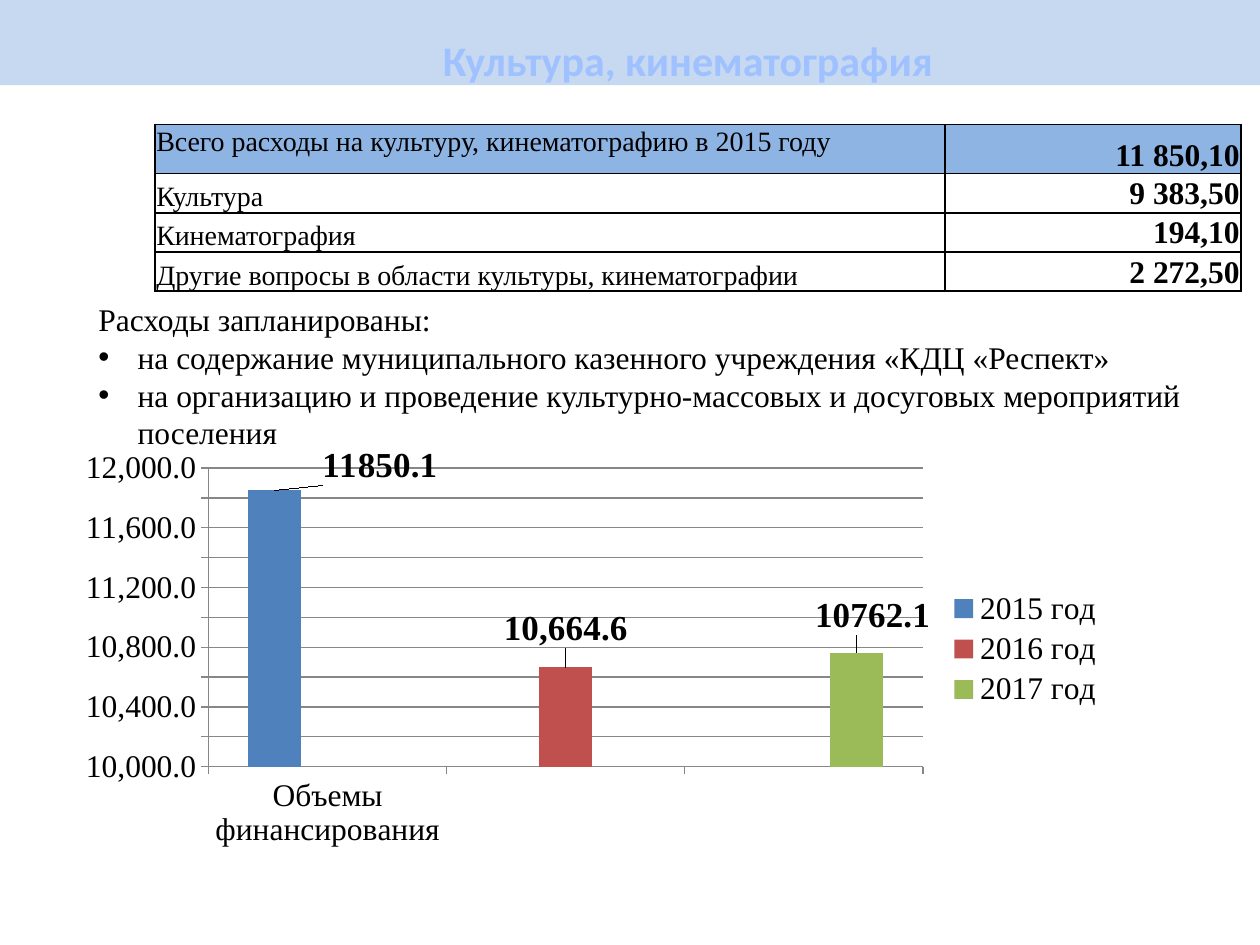
from lxml import etree
from pptx import Presentation
from pptx import util as u
from pptx.chart import data as cd
from pptx.dml.color import RGBColor
from pptx.enum import chart as ce, shapes, text
from pptx.oxml.ns import qn

BAND = RGBColor(0xC6, 0xD9, 0xF1)
HEAD = RGBColor(0x8E, 0xB4, 0xE3)
SKY = RGBColor(0xA0, 0xC1, 0xFF)
BLACK = RGBColor(0, 0, 0)
GRAY = RGBColor(0x87, 0x87, 0x87)
BLUE = RGBColor(0x4F, 0x81, 0xBD)
RED = RGBColor(0xC0, 0x50, 0x4D)
GREEN = RGBColor(0x9B, 0xBB, 0x59)
SERIF = "Times New Roman"


def write(para, words, size=18, bold=False, face=SERIF, color=BLACK, align=None):
    para.alignment = align
    para.space_before = u.Pt(0)
    run = para.add_run()
    run.text = words
    font = run.font
    font.name, font.size, font.bold = face, u.Pt(size), bold
    font.color.rgb = color


def place(shape, left, top, width, height):
    shape.left, shape.top = u.Cm(left), u.Cm(top)
    shape.width, shape.height = u.Cm(width), u.Cm(height)


prs = Presentation()
prs.slide_width, prs.slide_height = u.Cm(25.4), u.Cm(19.05)
slide = prs.slides.add_slide(prs.slide_layouts[1])
tree = slide.shapes

band = tree.add_shape(shapes.MSO_SHAPE.RECTANGLE, 0, 0, u.Cm(25.4), u.Cm(1.72))
band.shadow.inherit = False
band.fill.solid()
band.fill.fore_color.rgb = BAND
band.line.fill.background()
tree.title._element.addprevious(band._element)

title = tree.title
place(title, 2.44, 0.56, 22.86, 3.17)
title.text_frame.vertical_anchor = text.MSO_ANCHOR.TOP
title.text_frame.auto_size = text.MSO_AUTO_SIZE.NONE
write(title.text_frame.paragraphs[0], "Культура, кинематография", size=24, bold=True,
      face="Calibri", color=SKY, align=text.PP_ALIGN.CENTER)

years = [
    ("2015 год", 11850.1, "General", BLUE, 0.1, 0),
    ("2016 год", 10664.6, "#,##0.0", RED, 0, -0.035),
    ("2017 год", 10762.1, "General", GREEN, 0.015, -0.03),
]
data = cd.CategoryChartData()
data.categories = ["Объемы финансирования", "", ""]
for i, (name, value, fmt, *_) in enumerate(years):
    data.add_series(name, [value if i == j else None for j in range(3)], fmt)
chart = tree.add_chart(ce.XL_CHART_TYPE.COLUMN_CLUSTERED, u.Cm(1.3), u.Cm(8.92),
                       u.Cm(21.21), u.Cm(8.33), data).chart
chart.has_title = False
chart.font.name, chart.font.size = SERIF, u.Pt(18)
chart.font.color.rgb = BLACK
chart.has_legend = True
chart.legend.position = ce.XL_LEGEND_POSITION.RIGHT
chart.legend.include_in_layout = False

plot = chart.plots[0]
plot.vary_by_categories = False
plot.gap_width, plot.overlap = 150, 0
axis = chart.value_axis
axis.minimum_scale, axis.maximum_scale, axis.major_unit = 10000, 12000, 200
axis.tick_labels.number_format = "#,##0.0"
axis.tick_labels.number_format_is_linked = False
for line in (axis.format.line, axis.major_gridlines.format.line,
             chart.category_axis.format.line):
    line.color.rgb = GRAY
    line.width = u.Pt(0.75)

spots = []
for i, (series, year) in enumerate(zip(plot.series, years)):
    series.format.fill.solid()
    series.format.fill.fore_color.rgb = year[3]
    label = series.points[i].data_label
    label.font.size, label.font.bold = u.Pt(20), True
    label.font.name = SERIF
    label.font.color.rgb = BLACK
    label.position = ce.XL_LABEL_POSITION.OUTSIDE_END
    mark = series._element.find(".//" + qn("c:dLbl"))
    spots.append((mark.find(qn("c:idx")), {"x": year[4], "y": year[5]}))

area = chart._chartSpace.find(".//" + qn("c:plotArea"))
for old in area.findall(qn("c:layout")):
    area.remove(old)
spots.append((None, {"layoutTarget": "inner", "xMode": "edge", "yMode": "edge",
                     "x": 0.137, "y": 0.062, "w": 0.679, "h": 0.723}))
for prior, rules in spots:
    layout = etree.Element(qn("c:layout"))
    manual = etree.SubElement(layout, qn("c:manualLayout"))
    for key, val in rules.items():
        etree.SubElement(manual, qn("c:" + key)).set("val", str(val))
    if prior is None:
        area.insert(0, layout)
    else:
        prior.addnext(layout)

body = tree.placeholders[1]
place(body, 1.73, 5.92, 23.7, 3.33)
frame = body.text_frame
frame.auto_size = text.MSO_AUTO_SIZE.NONE
lines = [
    "Расходы запланированы:",
    "на содержание муниципального казенного учреждения «КДЦ «Респект»",
    "на организацию и проведение культурно-массовых и досуговых мероприятий поселения",
]
for i, words in enumerate(lines):
    para = frame.paragraphs[0] if i == 0 else frame.add_paragraph()
    props = para._p.get_or_add_pPr()
    dent = u.Cm(0.79) if i else 0
    props.set("marL", str(dent))
    props.set("indent", str(-dent))
    if i:
        etree.SubElement(props, qn("a:buFont")).set("typeface", "Arial")
        etree.SubElement(props, qn("a:buChar")).set("char", "•")
    else:
        etree.SubElement(props, qn("a:buNone"))
    write(para, words)

rows = [
    ("Всего расходы на культуру, кинематографию в 2015 году", "11 850,10"),
    ("Культура", "9 383,50"),
    ("Кинематография", "194,10"),
    ("Другие вопросы в области культуры, кинематографии", "2 272,50"),
]
table = tree.add_table(4, 2, u.Cm(3.12), u.Cm(2.51), u.Cm(21.9), u.Cm(3.36)).table
table.first_row = table.horz_banding = False
table.columns[0].width, table.columns[1].width = u.Cm(15.93), u.Cm(5.97)
A = text.MSO_ANCHOR
for r, pair in enumerate(rows):
    table.rows[r].height = u.Cm(0.79 if r else 0.99)
    for c, words in enumerate(pair):
        cell = table.cell(r, c)
        cell.margin_left = cell.margin_right = cell.margin_top = u.Cm(0.03)
        cell.margin_bottom = 0
        cell.vertical_anchor = ((A.TOP, A.BOTTOM), (A.BOTTOM, A.MIDDLE))[r > 0][c]
        write(cell.text_frame.paragraphs[0], words, size=18 if c else 16, bold=c == 1,
              align=text.PP_ALIGN.RIGHT if c else text.PP_ALIGN.LEFT)
        props = cell._tc.get_or_add_tcPr()
        for side in "LRTB":
            edge = etree.SubElement(props, qn("a:ln" + side), w=str(u.Pt(1)))
            ink = etree.SubElement(edge, qn("a:solidFill"))
            etree.SubElement(ink, qn("a:srgbClr")).set("val", str(BLACK))
        if r:
            cell.fill.background()
        else:
            cell.fill.solid()
            cell.fill.fore_color.rgb = HEAD

prs.save("out.pptx")
